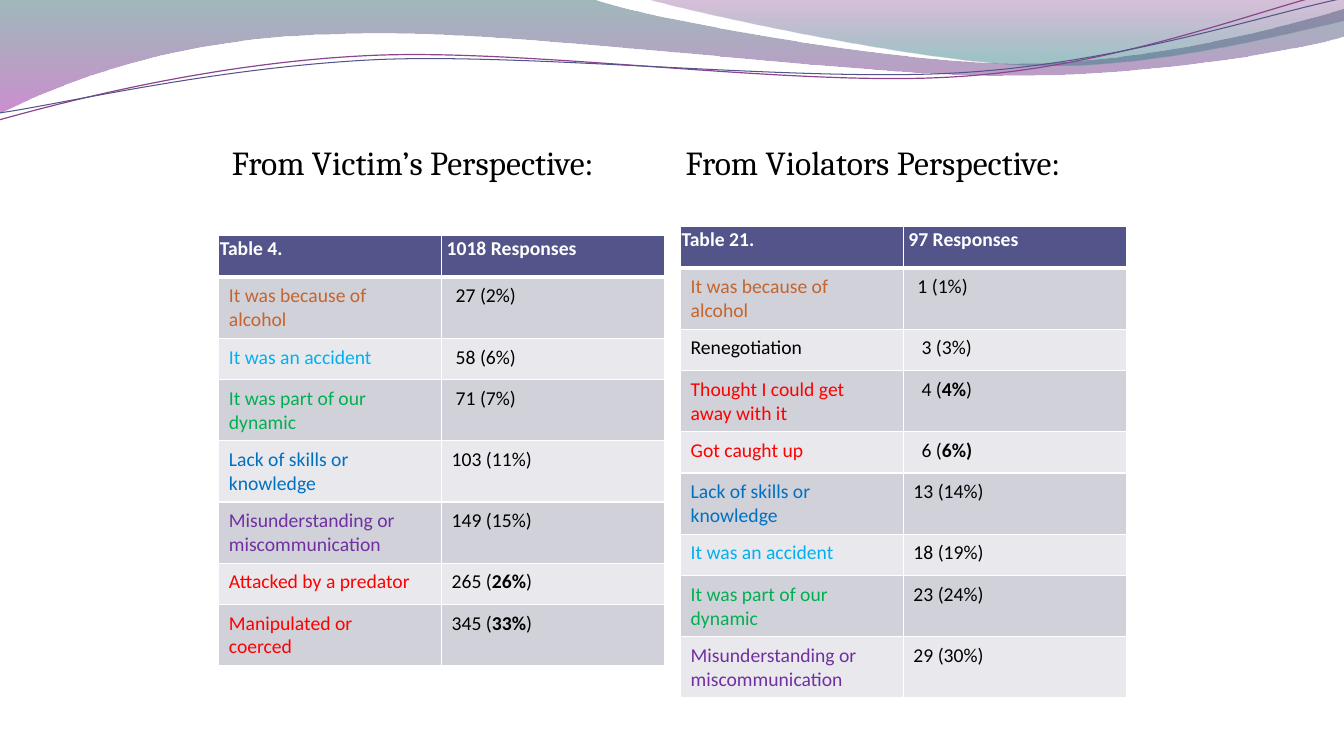
import math

from lxml import etree
from pptx import Presentation
from pptx.dml.color import RGBColor
from pptx.enum import text
from pptx.oxml import ns
from pptx.util import Inches, Pt

BLACK = RGBColor(0x00, 0x00, 0x00)
WHITE = RGBColor(0xFF, 0xFF, 0xFF)
INDIGO = RGBColor(0x53, 0x54, 0x8A)
PLUM = RGBColor(0x8D, 0x44, 0x90)
ORANGE = RGBColor(0xC4, 0x65, 0x2D)
SKY = RGBColor(0x00, 0xB0, 0xF0)
GREEN = RGBColor(0x00, 0xB0, 0x50)
BLUE = RGBColor(0x00, 0x70, 0xC0)
PURPLE = RGBColor(0x70, 0x30, 0xA0)
RED = RGBColor(0xFF, 0x00, 0x00)
BANDS = (RGBColor(0xD1, 0xD1, 0xDA), RGBColor(0xE9, 0xE9, 0xED))
TEAL_TOP = RGBColor(0x2D, 0x63, 0x68)
MAGENTA = RGBColor(0xA5, 0x30, 0xA9)
MAUVE = RGBColor(0x7F, 0x2F, 0x82)
TEAL = RGBColor(0x2F, 0x7B, 0x82)

SPACE = 0.04  # width of one leading space, inches
TILT = -2.7   # rotation of the strands, degrees

# Path segments: 2 numbers are a line end, 6 numbers a cubic curve.
LEFT_WAVE = [(0, 0), (5.87, -0.01), (6.34, 0.17, 8.85, 0.63, 10.11, 0.63),
             (11.38, 0.63, 12.78, 0.26, 13.33, 0.09), (13.35, 0.36),
             (13.11, 0.44, 11.6, 0.76, 9.94, 0.75),
             (8.29, 0.75, 5.09, 0.28, 3.43, 0.34),
             (1.72, 0.36, 0.61, 0.83, -0.01, 1.13), (0, 0)]
RIGHT_WAVE = [(6.39, -0.01), (6.79, 0.11, 9.09, 0.62, 10.25, 0.65),
              (11.41, 0.69, 12.82, 0.32, 13.33, 0.21), (13.33, 0),
              (6.39, -0.01)]
PLUM_STRAND = [(-0.01, 1.19), (0.64, 1.01, 2.11, 0.62, 3.69, 0.55),
               (5.27, 0.48, 7.9, 0.87, 9.5, 0.76),
               (11.1, 0.66, 12.52, 0.08, 13.31, -0.1)]
INDIGO_STRAND = [(0, 1.12), (0.63, 1.03, 2.18, 0.66, 3.78, 0.59),
                 (5.37, 0.53, 7.96, 0.82, 9.55, 0.72),
                 (11.15, 0.62, 12.55, 0.14, 13.34, -0.02)]

# Label, label colour, leading spaces, value with bold parts between asterisks.
VICTIM_ROWS = [
    ("It was because of alcohol", ORANGE, 1, "27 (2%)"),
    ("It was an accident", SKY, 1, "58 (6%)"),
    ("It was part of our dynamic", GREEN, 1, "71 (7%)"),
    ("Lack of skills or knowledge", BLUE, 0, "103 (11%)"),
    ("Misunderstanding or miscommunication", PURPLE, 0, "149 (15%)"),
    ("Attacked by a predator", RED, 0, "265 (*26%*)"),
    ("Manipulated or coerced", RED, 0, "345 (*33%*)"),
]
VIOLATOR_ROWS = [
    ("It was because of alcohol", ORANGE, 1, "1 (1%)"),
    ("Renegotiation", BLACK, 2, "3 (3%)"),
    ("Thought I could get away with it", RED, 2, "4 (*4%*)"),
    ("Got caught up", RED, 2, "6 (*6%)*"),
    ("Lack of skills or knowledge", BLUE, 0, "13 (14%)"),
    ("It was an accident", SKY, 0, "18 (19%)"),
    ("It was part of our dynamic", GREEN, 0, "23 (24%)"),
    ("Misunderstanding or miscommunication", PURPLE, 0, "29 (30%)"),
]


def set_all(obj, **values):
    for name, value in values.items():
        setattr(obj, name, value)


def turn(path, center, degrees):
    """Return the path turned clockwise about a centre."""
    cx, cy = center
    cos, sin = math.cos(math.radians(degrees)), math.sin(math.radians(degrees))
    turned = []
    for seg in path:
        points = [(x - cx, y - cy) for x, y in zip(seg[::2], seg[1::2])]
        turned.append([v for x, y in points
                       for v in (cx + x*cos - y*sin, cy + x*sin + y*cos)])
    return turned


def add_outline(shapes, path, close):
    """Lay all path points as lines, then join each curve's three into one."""
    points = [(Inches(x), Inches(y)) for seg in path
              for x, y in zip(seg[::2], seg[1::2])]
    fb = shapes.build_freeform(*points[0])
    fb.add_line_segments(points[1:], close=close)
    sp = fb.convert_to_shape()
    sp.shadow.inherit = False
    sp.fill.background()
    lines = iter(list(sp._element.iter(ns.qn("a:lnTo"))))
    for seg in path[1:]:
        first = next(lines)
        if len(seg) == 6:
            curve = etree.Element(ns.qn("a:cubicBezTo"))
            first.addprevious(curve)
            for line in (first, next(lines), next(lines)):
                curve.append(line[0])
                line.getparent().remove(line)
    return sp


def add_wave(s, path, stops):
    """Add a closed wave; stops are (position %, colour, opacity %)."""
    sp = add_outline(s.shapes, path, True)
    sp.line.fill.background()
    grad = etree.Element(ns.qn("a:gradFill"), rotWithShape="1")
    gs_list = etree.SubElement(grad, ns.qn("a:gsLst"))
    for pos, color, opacity in stops:
        gs = etree.SubElement(gs_list, ns.qn("a:gs"), pos=str(pos * 1000))
        clr = etree.SubElement(gs, ns.qn("a:srgbClr"), val=str(color))
        etree.SubElement(clr, ns.qn("a:alpha"), val=str(opacity * 1000))
    etree.SubElement(grad, ns.qn("a:lin"), ang="5400000", scaled="0")
    no_fill = sp._element.spPr.find(ns.qn("a:noFill"))
    no_fill.getparent().replace(no_fill, grad)


def add_strand(group, path, center, color, width):
    sp = add_outline(group.shapes, turn(path, center, -TILT), False)
    sp.rotation = TILT
    sp.line.color.rgb = color
    sp.line.width = Pt(width)


def add_run(p, content, font, size, color, bold=False):
    r = p.add_run()
    r.text = content
    set_all(r.font, name=font, size=Pt(size), bold=bold)
    r.font.color.rgb = color


def add_heading(s, left, content):
    tf = s.shapes.add_textbox(Inches(left), Inches(1.25),
                              Inches(4.42), Inches(0.72)).text_frame
    set_all(tf, word_wrap=True, vertical_anchor=text.MSO_ANCHOR.MIDDLE,
            margin_left=Inches(0.05), margin_right=Inches(0.05),
            margin_top=0, margin_bottom=0)
    p = tf.paragraphs[0]
    p.space_before = Pt(5)
    add_run(p, content, "Cambria", 24, BLACK)


def set_borders(cell, top, bottom):
    """Give a cell white borders, 1 pt at the sides."""
    tc_pr = cell._tc.get_or_add_tcPr()
    sides = (("L", 1), ("R", 1), ("T", top), ("B", bottom))
    for i, (side, width) in enumerate(sides):
        ln = etree.Element(ns.qn("a:ln" + side), w=str(Pt(width)))
        fill = etree.SubElement(ln, ns.qn("a:solidFill"))
        etree.SubElement(fill, ns.qn("a:srgbClr"), val=str(WHITE))
        tc_pr.insert(i, ln)


def fill_cell(cell, row, content, color, spaces=0):
    header = row == 0
    left, right, edge = (0.01, 0.01, 0.01) if header else (0.1, 0.22, 0.07)
    set_all(cell, margin_left=Inches(left + spaces * SPACE),
            margin_right=Inches(right),
            margin_top=Inches(edge), margin_bottom=Inches(edge))
    cell.fill.solid()
    cell.fill.fore_color.rgb = INDIGO if header else BANDS[(row - 1) % 2]
    set_borders(cell, 3 if row == 1 else 1, 3 if header else 1)
    for i, part in enumerate(content.split("*")):
        if part:
            add_run(cell.text_frame.paragraphs[0], part, "Calibri", 14,
                    color, header or i % 2 == 1)


def add_responses(s, left, top, title, total, rows):
    rows = [(title, WHITE, 1, total)] + rows
    table = s.shapes.add_table(len(rows), 2, Inches(left), Inches(top),
                               Inches(4.42), Inches(0.41 * len(rows))).table
    for i, (label, color, spaces, value) in enumerate(rows):
        table.rows[i].height = Inches(0.41)
        fill_cell(table.cell(i, 0), i, label, color)
        fill_cell(table.cell(i, 1), i, value, BLACK if i else WHITE, spaces)


def main():
    prs = Presentation()
    set_all(prs, slide_width=Inches(13.33), slide_height=Inches(7.5))
    s = prs.slides.add_slide(prs.slide_layouts[6])
    add_wave(s, LEFT_WAVE, [(0, TEAL_TOP, 45), (100, MAGENTA, 55)])
    add_wave(s, RIGHT_WAVE, [(0, MAUVE, 30), (80, TEAL, 45)])
    strands = s.shapes.add_group_shape()
    add_strand(strands, PLUM_STRAND, (6.65, 0.58), PLUM, 0.85)
    add_strand(strands, INDIGO_STRAND, (6.67, 0.59), INDIGO, 0.75)
    add_heading(s, 2.25, "From Victim’s Perspective:")
    add_heading(s, 6.75, "From Violators Perspective:")
    add_responses(s, 2.17, 2.34, "Table 4.", "1018 Responses", VICTIM_ROWS)
    add_responses(s, 6.75, 2.25, "Table 21.", "97 Responses", VIOLATOR_ROWS)
    prs.save("out.pptx")


if __name__ == "__main__":
    main()
